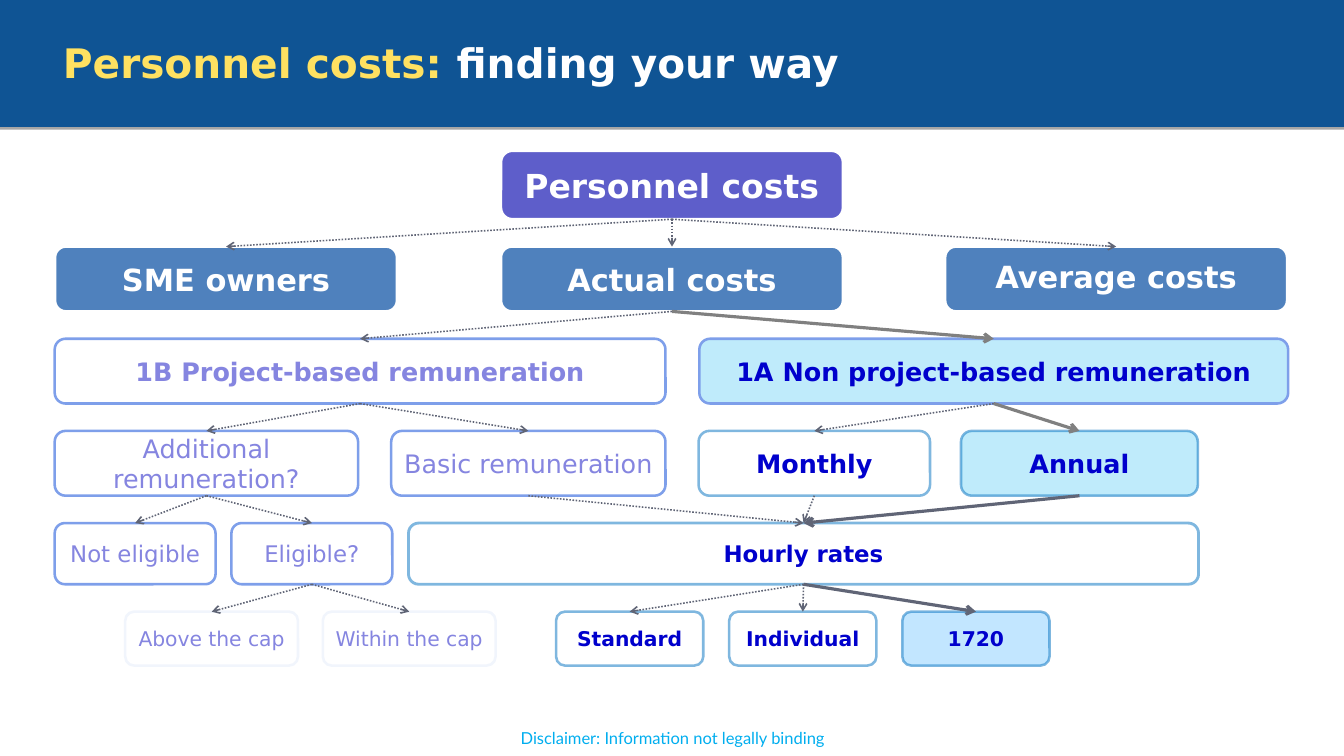
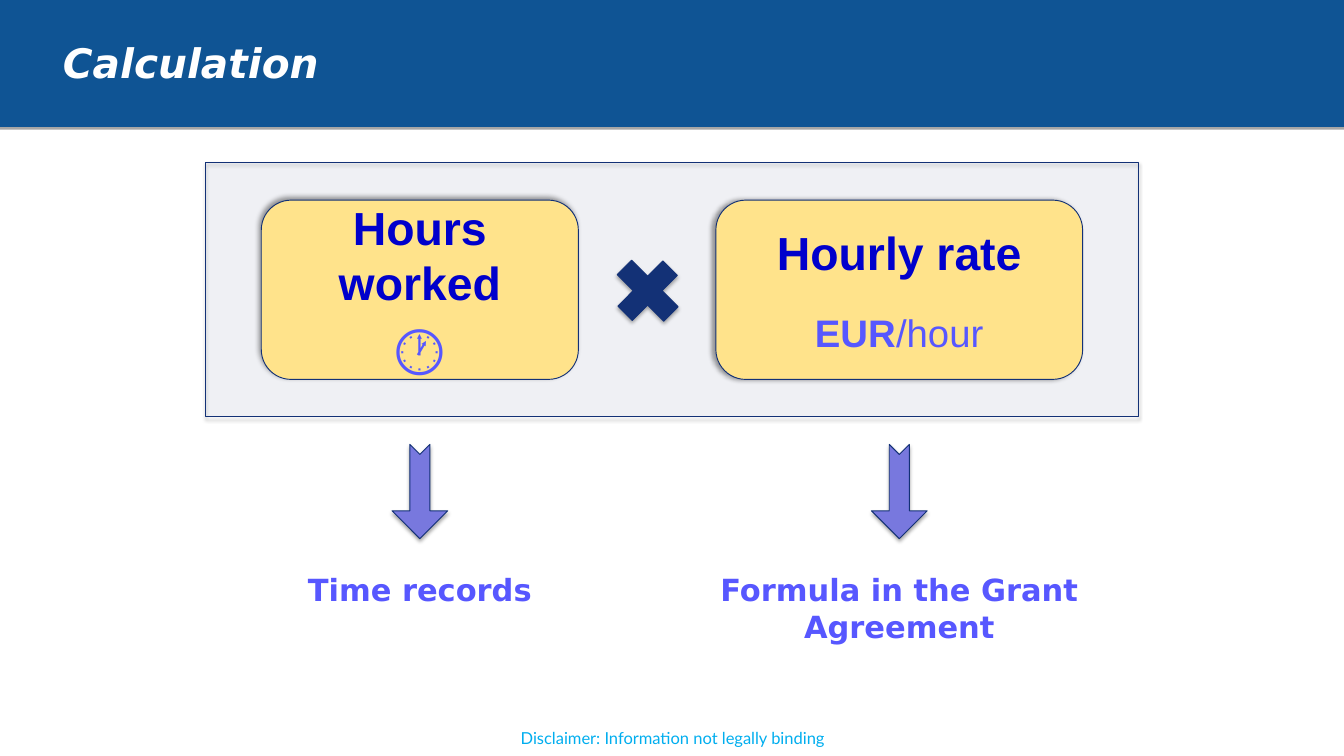
"""Build two slides on personnel costs: a decision tree and a calculation."""
from lxml import etree
from pptx import Presentation
from pptx.dml.color import RGBColor
from pptx.enum.dml import MSO_LINE
from pptx.enum.shapes import MSO_CONNECTOR, MSO_SHAPE
from pptx.enum.text import MSO_ANCHOR, PP_ALIGN
from pptx.oxml.ns import qn
from pptx.util import Cm, Pt

RECTANGLE, ROUNDED = MSO_SHAPE.RECTANGLE, MSO_SHAPE.ROUNDED_RECTANGLE
PLUS, NOTCHED_ARROW = MSO_SHAPE.MATH_PLUS, MSO_SHAPE.NOTCHED_RIGHT_ARROW
STRAIGHT, SOLID, DOTS = MSO_CONNECTOR.STRAIGHT, MSO_LINE.SOLID, MSO_LINE.ROUND_DOT
LEFT, CENTER = PP_ALIGN.LEFT, PP_ALIGN.CENTER
TOP, MIDDLE = MSO_ANCHOR.TOP, MSO_ANCHOR.MIDDLE
BOTTOM_SITE, TOP_SITE = 2, 0

WHITE = RGBColor(0xFF, 0xFF, 0xFF)
BAND_BLUE = RGBColor(0x0F, 0x54, 0x94)
TITLE_YELLOW = RGBColor(0xFF, 0xE1, 0x61)
FOOTER_BLUE = RGBColor(0x00, 0xAE, 0xEF)
ROOT_VIOLET = RGBColor(0x5E, 0x5E, 0xCA)
BRANCH_BLUE = RGBColor(0x4F, 0x81, 0xBD)
SOFT_BLUE = RGBColor(0x7E, 0x9F, 0xEA)
SOFT_VIOLET = RGBColor(0x85, 0x85, 0xE0)
STRONG_BLUE = RGBColor(0x00, 0x00, 0xCC)
EDGE_BLUE = RGBColor(0x00, 0x70, 0xC0)
SKY = RGBColor(0x00, 0xB0, 0xF0)
AZURE = RGBColor(0x00, 0x99, 0xFF)
SLATE = RGBColor(0x60, 0x65, 0x76)
GREY = RGBColor(0x80, 0x80, 0x80)
NAVY = RGBColor(0x13, 0x31, 0x76)
CREAM = RGBColor(0xFF, 0xE3, 0x8B)
ARROW_VIOLET = RGBColor(0x78, 0x78, 0xDE)
VIOLET = RGBColor(0x57, 0x57, 0xFF)

SANS = "DejaVu Sans"
TITLE_FONT = {"name": SANS, "size": Pt(32), "bold": True}
FOOTER_FONT = {"name": "Lato", "size": Pt(13)}
CAPTION_FONT = {"name": SANS, "size": Pt(24), "bold": True}
FACTOR_FONT = {"name": "Arial", "size": Pt(36.5), "bold": True}
FOOTER = "Disclaimer: Information not legally binding"
SOFT_SHADOW = {"opacity": 35, "blur": 3.1, "distance": 1.8, "angle": 90}

ROOT = {"fill": ROOT_VIOLET, "line": WHITE, "color": WHITE, "bold": True}
BRANCH = {**ROOT, "fill": BRANCH_BLUE}
FADED = {"fill": WHITE, "line": SOFT_BLUE, "color": SOFT_VIOLET, "bold": False}
FADED_BOLD = {**FADED, "bold": True}
FADED_CAP = {**FADED, "line_opacity": 10}
OPEN = {"fill": WHITE, "line": EDGE_BLUE, "line_opacity": 49,
        "color": STRONG_BLUE, "bold": True}
OPEN_WIDE = {**OPEN, "line_width": 2.25}
CHOSEN = {**OPEN, "fill": SKY, "fill_opacity": 25}
CHOSEN_TYPE = {**CHOSEN, "line": SOFT_BLUE, "line_opacity": 100}
CHOSEN_HOURS = {**CHOSEN, "fill": AZURE, "fill_opacity": 24}

TREE_TOP, TREE_GAP = 4.19, 0.76
TREE = [
    (1.9, 26, [("Personnel costs", 13.92, 9.5, ROOT)]),
    (1.8, 24, [("SME owners", 1.53, 9.5, BRANCH),
               ("Actual costs", 13.92, 9.5, BRANCH),
               ("Average costs", 26.26, 9.5, BRANCH)]),
    (1.8, 20, [("1B Project-based remuneration", 1.52, 16.97, FADED_BOLD),
               ("1A Non project-based remuneration", 19.43, 16.36, CHOSEN_TYPE)]),
    (1.8, 20, [("Additional remuneration?", 1.52, 8.43, FADED),
               ("Basic remuneration", 10.87, 7.62, FADED),
               ("Monthly", 19.41, 6.43, OPEN),
               ("Annual", 26.7, 6.58, CHOSEN)]),
    (1.7, 18, [("Not eligible", 1.52, 4.47, FADED),
               ("Eligible?", 6.43, 4.47, FADED),
               ("Hourly rates", 11.35, 21.95, OPEN_WIDE)]),
    (1.5, 16, [("Above the cap", 3.48, 4.8, FADED_CAP),
               ("Within the cap", 8.97, 4.8, FADED_CAP),
               ("Standard", 15.45, 4.09, OPEN),
               ("Individual", 20.26, 4.09, OPEN),
               ("1720", 25.07, 4.09, CHOSEN_HOURS)]),
]
PARAGRAPH_FORMATS = {"Average costs": {"line_spacing": 0.9, "space_after": Pt(8.4)}}

DOTTED = (SLATE, 1.25, DOTS)
GREY_PATH = (GREY, 2.5, SOLID)
SLATE_PATH = (SLATE, 2.5, SOLID)
LINKS = [
    ("Personnel costs", "SME owners", DOTTED),
    ("Personnel costs", "Actual costs", DOTTED),
    ("Personnel costs", "Average costs", DOTTED),
    ("Actual costs", "1B Project-based remuneration", DOTTED),
    ("Actual costs", "1A Non project-based remuneration", GREY_PATH),
    ("1B Project-based remuneration", "Additional remuneration?", DOTTED),
    ("1B Project-based remuneration", "Basic remuneration", DOTTED),
    ("1A Non project-based remuneration", "Monthly", DOTTED),
    ("1A Non project-based remuneration", "Annual", GREY_PATH),
    ("Additional remuneration?", "Not eligible", DOTTED),
    ("Additional remuneration?", "Eligible?", DOTTED),
    ("Basic remuneration", "Hourly rates", DOTTED),
    ("Monthly", "Hourly rates", DOTTED),
    ("Annual", "Hourly rates", SLATE_PATH),
    ("Eligible?", "Above the cap", DOTTED),
    ("Eligible?", "Within the cap", DOTTED),
    ("Hourly rates", "Standard", DOTTED),
    ("Hourly rates", "Individual", DOTTED),
    ("Hourly rates", "1720", SLATE_PATH),
]

FACTORS = [
    {"left": 7.26, "width": 8.81, "angle": 225,
     "text": [({}, [("Hours worked", STRONG_BLUE, FACTOR_FONT)]),
              ({}, [("🕐", VIOLET, {**FACTOR_FONT, "size": Pt(46.5)})])],
     "caption": "Time records", "caption_width": 9.3, "caption_height": 1.35},
    {"left": 19.89, "width": 10.19, "angle": 180,
     "text": [({}, [("Hourly rate", STRONG_BLUE, FACTOR_FONT)]),
              ({"space_before": Pt(22.6)},
               [("EUR", VIOLET, {**FACTOR_FONT, "size": Pt(30.2)}),
                ("/hour", VIOLET, {"name": "Arial", "size": Pt(30.2), "bold": False})])],
     "caption": "Formula in the Grant Agreement", "caption_width": 13.11,
     "caption_height": 2.36},
]


def set_opacity(solid_fill, percent):
    """Make a solid fill element partly transparent."""
    if percent < 100:
        etree.SubElement(solid_fill[0], qn("a:alpha"), val=str(percent * 1000))


def add_shadow(shape, opacity, blur, distance, angle):
    """Give a shape a black outer shadow."""
    effects = shape._element.spPr.find(qn("a:effectLst"))
    shadow = etree.SubElement(
        effects, qn("a:outerShdw"), blurRad=str(Pt(blur)), dist=str(Pt(distance)),
        dir=str(angle * 60000), algn="ctr", rotWithShape="0")
    color = etree.SubElement(shadow, qn("a:srgbClr"), val="000000")
    etree.SubElement(color, qn("a:alpha"), val=str(opacity * 1000))


def add_box(slide, kind, place, fill, line=None, line_width=0.75,
            fill_opacity=100, line_opacity=100, shadow=None):
    """Add a preset shape with its fill, outline and shadow."""
    shape = slide.shapes.add_shape(kind, *map(Cm, place))
    shape.shadow.inherit = False
    properties = shape._element.spPr
    shape.fill.solid()
    shape.fill.fore_color.rgb = fill
    set_opacity(properties.find(qn("a:solidFill")), fill_opacity)
    if line is None:
        shape.line.fill.background()
    else:
        shape.line.color.rgb = line
        shape.line.width = Pt(line_width)
        set_opacity(properties.find(qn("a:ln")).find(qn("a:solidFill")), line_opacity)
    if shadow:
        add_shadow(shape, **shadow)
    return shape


def write(shape, paragraphs, alignment=CENTER, anchor=MIDDLE, insets=(0, 0)):
    """Fill a shape with paragraphs given as (format, runs)."""
    frame = shape.text_frame
    frame.word_wrap = True
    frame.vertical_anchor = anchor
    frame.margin_left = frame.margin_right = Cm(insets[0])
    frame.margin_top = frame.margin_bottom = Cm(insets[1])
    for index, (paragraph_format, runs) in enumerate(paragraphs):
        paragraph = frame.add_paragraph() if index else frame.paragraphs[0]
        paragraph.alignment = alignment
        for name, value in paragraph_format.items():
            setattr(paragraph, name, value)
        for text, color, font_format in runs:
            run = paragraph.add_run()
            run.text = text
            run.font.color.rgb = color
            for name, value in font_format.items():
                setattr(run.font, name, value)


def add_text(slide, place, runs, **options):
    """Add a text box with one paragraph."""
    write(slide.shapes.add_textbox(*map(Cm, place)), [({}, runs)], anchor=TOP, **options)


def add_slide(presentation, title_runs):
    """Add a slide with the band, title and footer."""
    slide = presentation.slides.add_slide(presentation.slide_layouts[6])
    add_box(slide, RECTANGLE, (0, 0, 37.34, 3.45), BAND_BLUE, BAND_BLUE, 5,
            shadow={**SOFT_SHADOW, "blur": 0})
    add_text(slide, (1.47, 0.89, 33.58, 1.65), title_runs,
             alignment=LEFT, insets=(0.28, 0.15))
    footer = add_box(slide, RECTANGLE, (12.78, 20.09, 11.81, 0.81), WHITE, fill_opacity=12)
    write(footer, [({}, [(FOOTER, FOOTER_BLUE, FOOTER_FONT)])], insets=(0.25, 0.13))
    return slide


def add_link(slide, start, end, color, width, dash):
    """Join two boxes with an arrow from bottom to top."""
    connector = slide.shapes.add_connector(STRAIGHT, 0, 0, 0, 0)
    connector.begin_connect(start, BOTTOM_SITE)
    connector.end_connect(end, TOP_SITE)
    connector.line.color.rgb = color
    connector.line.width = Pt(width)
    connector.line.dash_style = dash
    properties = connector._element.spPr
    etree.SubElement(properties.find(qn("a:ln")), qn("a:tailEnd"), type="arrow")
    etree.SubElement(properties, qn("a:effectLst"))


def build_tree(presentation):
    """Build the decision tree slide."""
    slide = add_slide(presentation, [("Personnel costs: ", TITLE_YELLOW, TITLE_FONT),
                                     ("finding your way", WHITE, TITLE_FONT)])
    boxes, top = {}, TREE_TOP
    for height, size, row in TREE:
        for label, left, width, style in row:
            look = {"line_width": 2, **style}
            color, bold = look.pop("color"), look.pop("bold")
            font_format = {"name": SANS, "size": Pt(size), "bold": bold}
            boxes[label] = add_box(slide, ROUNDED, (left, top, width, height), **look)
            write(boxes[label], [(PARAGRAPH_FORMATS.get(label, {}),
                                  [(label, color, font_format)])])
        top += height + TREE_GAP
    for start, end, look in LINKS:
        add_link(slide, boxes[start], boxes[end], *look)


def build_calculation(presentation):
    """Build the calculation slide."""
    slide = add_slide(presentation,
                      [("Calculation", WHITE, {**TITLE_FONT, "italic": True})])
    add_box(slide, RECTANGLE, (5.72, 4.52, 25.91, 7.06), NAVY, NAVY,
            fill_opacity=5, shadow=SOFT_SHADOW)
    times = add_box(slide, PLUS, (16.79, 6.83, 2.41, 2.49), NAVY, NAVY, shadow=SOFT_SHADOW)
    times.rotation = 315
    arrow_width, arrow_height = 2.62, 1.55
    for factor in FACTORS:
        center = factor["left"] + factor["width"] / 2
        shadow = {"opacity": 40, "blur": 4, "distance": 3, "angle": factor["angle"]}
        box = add_box(slide, ROUNDED, (factor["left"], 5.56, factor["width"], 4.98),
                      CREAM, NAVY, shadow=shadow)
        write(box, factor["text"], insets=(0.33, 0.15))
        arrow = add_box(slide, NOTCHED_ARROW,
                        (center - arrow_width / 2, 12.88, arrow_width, arrow_height),
                        ARROW_VIOLET, NAVY, shadow=SOFT_SHADOW)
        arrow.rotation = 90
        arrow.adjustments[0] = 0.36
        width = factor["caption_width"]
        add_text(slide, (center - width / 2, 15.72, width, factor["caption_height"]),
                 [(factor["caption"], VIOLET, CAPTION_FONT)], insets=(0.33, 0.15))


def main():
    """Build and save the presentation."""
    presentation = Presentation()
    presentation.slide_width, presentation.slide_height = Cm(37.34), Cm(21)
    build_tree(presentation)
    build_calculation(presentation)
    presentation.save("out.pptx")


if __name__ == "__main__":
    main()
